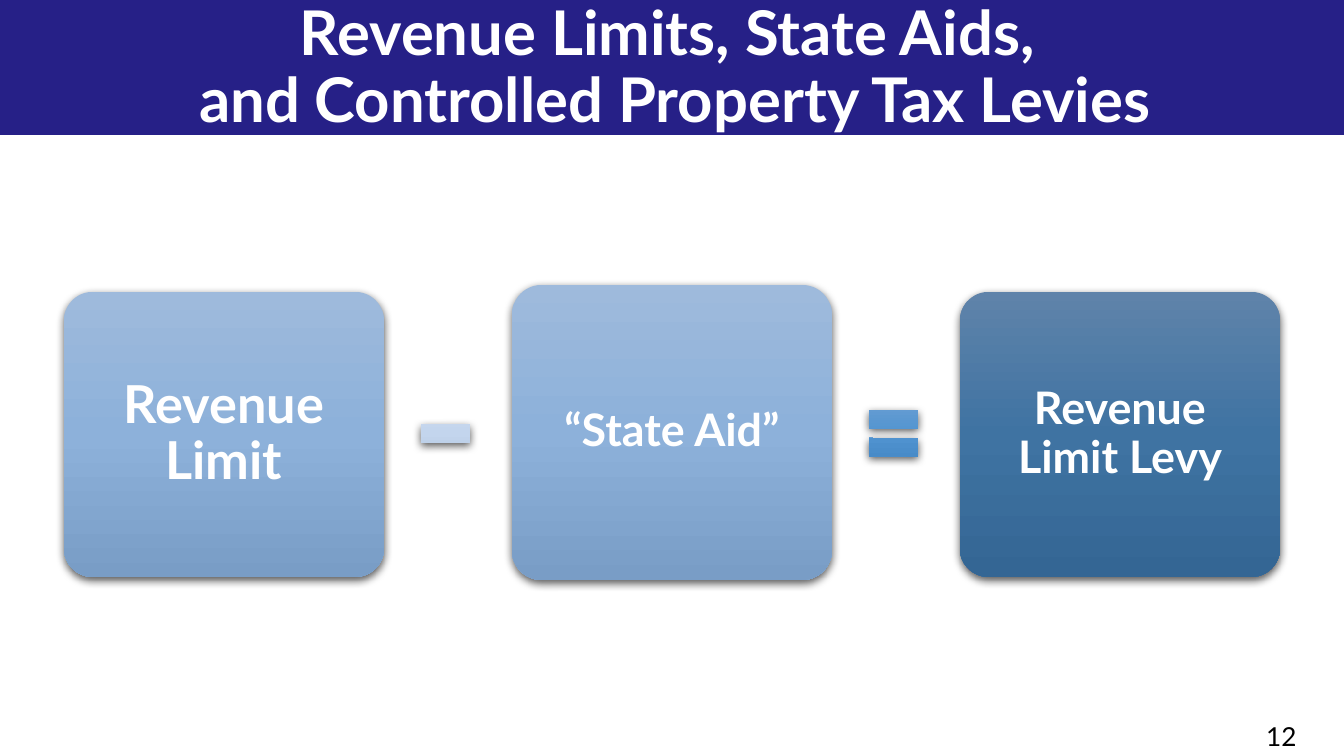
from dataclasses import dataclass

from pptx import Presentation
from pptx.dml.color import RGBColor
from pptx.enum.shapes import MSO_SHAPE
from pptx.enum.text import MSO_ANCHOR, PP_ALIGN
from pptx.oxml import parse_xml
from pptx.oxml.ns import nsdecls, qn
from pptx.util import Pt

RECT, CARD = MSO_SHAPE.RECTANGLE, MSO_SHAPE.ROUNDED_RECTANGLE
MINUS, EQUAL = MSO_SHAPE.MATH_MINUS, MSO_SHAPE.MATH_EQUAL
TOP, MIDDLE = MSO_ANCHOR.TOP, MSO_ANCHOR.MIDDLE
LEFT, CENTER = PP_ALIGN.LEFT, PP_ALIGN.CENTER

EMU_PER_PX = 914400 / 134.4


@dataclass(frozen=True)
class Theme:
    font: str = "Lato"
    white: str = "FFFFFF"
    black: str = "000000"
    banner: str = "262087"
    light_blue: tuple = ("9EBADC", "8DB1DA", "799DC6")
    dark_blue: tuple = ("5F83AA", "3F73A2", "346694")
    minus: tuple = ("CEDCEF", "C3D5ED", "AABDD6")
    equal: tuple = ("6EA0D2", "5194D1", "4184C1")
    title_size: int = 33
    large_size: int = 28
    card_size: int = 24
    number_size: int = 14


THEME = Theme()


def px(n):
    return round(n * EMU_PER_PX)


def write(s, text, size, color=THEME.white, bold=True, align=CENTER,
          anchor=MIDDLE, spacing=0.9):
    """Fill a shape with one formatted paragraph."""
    tf = s.text_frame
    tf.word_wrap = True
    tf.vertical_anchor = anchor
    p = tf.paragraphs[0]
    p.text = text
    p.alignment = align
    p.line_spacing = spacing
    style = {"name": THEME.font, "size": Pt(size), "bold": bold}
    for r in p.runs:
        for key, value in style.items():
            setattr(r.font, key, value)
        r.font.color.rgb = RGBColor.from_string(color)


def add_text(slide, box, text, size, **style):
    s = slide.shapes.add_textbox(*map(px, box))
    write(s, text, size, **style)


def add_plain(slide, kind, box):
    """Add a preset shape without line or shadow."""
    s = slide.shapes.add_shape(kind, *map(px, box))
    s.line.fill.background()
    s.shadow.inherit = False
    return s


def add_raised(slide, kind, box, colors):
    """Add a shape with a vertical three-stop gradient and a soft shadow."""
    s = add_plain(slide, kind, box)
    s.fill.background()
    stops = "".join(
        f'<a:gs pos="{i * 50000}"><a:srgbClr val="{c}"/></a:gs>'
        for i, c in enumerate(colors))
    gradient = parse_xml(
        f'<a:gradFill {nsdecls("a")} rotWithShape="0"><a:gsLst>{stops}</a:gsLst>'
        '<a:lin ang="5400000" scaled="0"/></a:gradFill>')
    props = s._element.spPr
    props.replace(props.find(qn("a:noFill")), gradient)
    props.find(qn("a:effectLst")).append(parse_xml(
        f'<a:outerShdw {nsdecls("a")} blurRad="{Pt(4.5)}" dist="{Pt(1.5)}" '
        'dir="5400000" rotWithShape="0">'
        f'<a:srgbClr val="{THEME.black}"><a:alpha val="63000"/></a:srgbClr>'
        '</a:outerShdw>'))
    return s


def add_card(slide, box, colors, text, size, inset):
    s = add_raised(slide, CARD, box, colors)
    s.adjustments[0] = 0.1
    tf = s.text_frame
    for side in ("left", "top", "right", "bottom"):
        setattr(tf, f"margin_{side}", px(inset))
    write(s, text, size)


def add_operator(slide, kind, left, rotation, colors):
    s = add_raised(slide, kind, (left, 394, 67, 79), colors)
    s.rotation = rotation


def main():
    prs = Presentation()
    prs.slide_width, prs.slide_height = px(1344), px(756)
    slide = prs.slides.add_slide(prs.slide_layouts[6])

    # Title banner
    banner = add_plain(slide, RECT, (-1, 0, 1345, 135))
    banner.fill.solid()
    banner.fill.fore_color.rgb = RGBColor.from_string(THEME.banner)
    add_text(slide, (0, 0, 1335, 138),
             "Revenue Limits, State Aids,\v and Controlled Property Tax Levies",
             THEME.title_size)

    # Terms of the equation, evenly spaced
    cards = [
        ("Revenue Limit", THEME.light_blue, THEME.large_size, 292, 285, 16),
        ("“State Aid”", THEME.light_blue, THEME.card_size, 285, 295, 13),
        ("Revenue Limit Levy", THEME.dark_blue, THEME.card_size, 292, 285, 13),
    ]
    for i, (text, colors, size, top, height, inset) in enumerate(cards):
        add_card(slide, (64 + 448 * i, top, 320, height), colors, text, size, inset)

    # Operators between the terms
    add_operator(slide, MINUS, 412, 179.7, THEME.minus)
    add_operator(slide, EQUAL, 860, 180.3, THEME.equal)

    # Slide number
    add_text(slide, (1253, 714, 74, 34), "12", THEME.number_size,
             color=THEME.black, bold=False, align=LEFT, anchor=TOP, spacing=1.0)

    prs.save("out.pptx")


if __name__ == "__main__":
    main()
